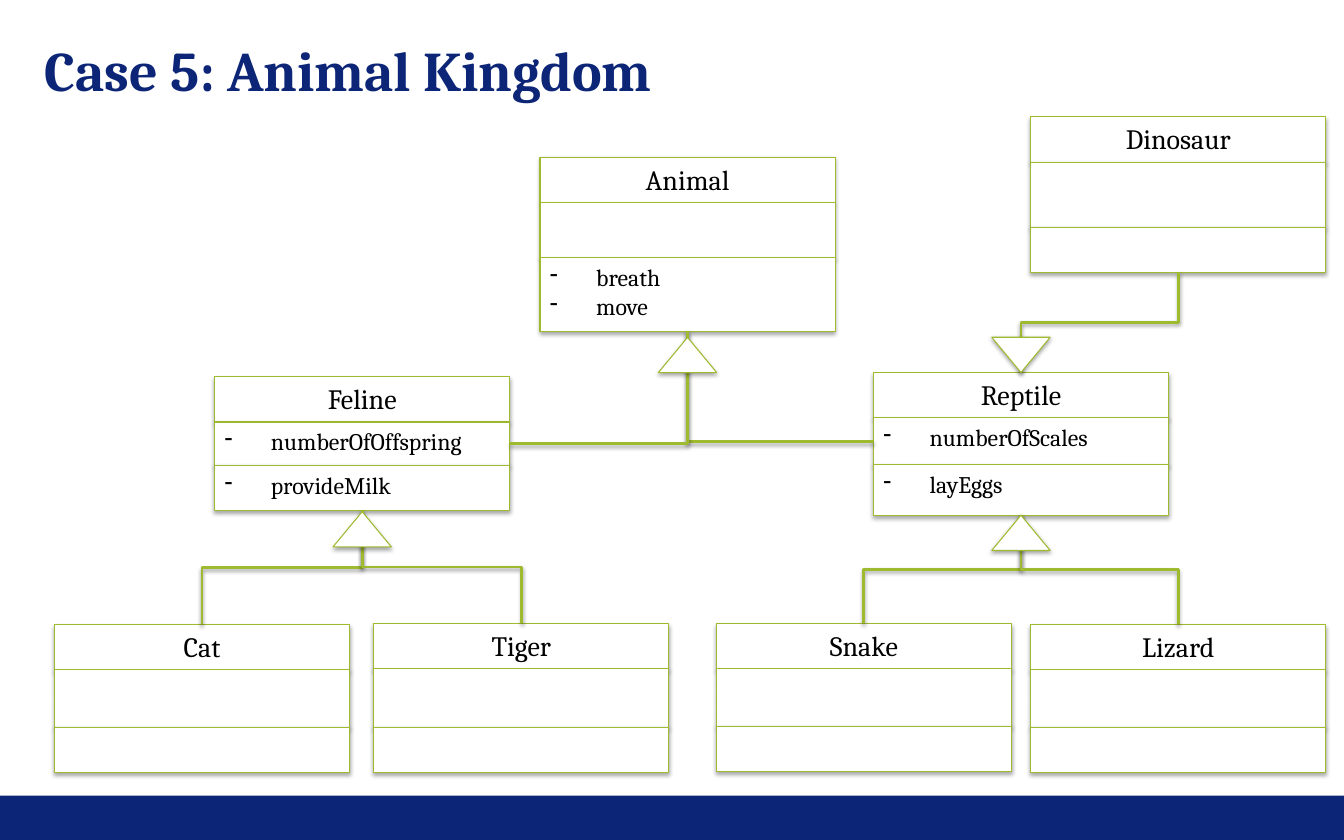
from dataclasses import dataclass

from lxml import etree
from pptx import Presentation
from pptx.dml.color import RGBColor
from pptx.enum.shapes import MSO_CONNECTOR, MSO_SHAPE
from pptx.enum.text import MSO_ANCHOR, PP_ALIGN
from pptx.oxml.ns import qn
from pptx.util import Inches, Pt

ELBOW = MSO_CONNECTOR.ELBOW
RECTANGLE, TRIANGLE = MSO_SHAPE.RECTANGLE, MSO_SHAPE.ISOSCELES_TRIANGLE
TOP, MIDDLE = MSO_ANCHOR.TOP, MSO_ANCHOR.MIDDLE
LEFT, CENTER = PP_ALIGN.LEFT, PP_ALIGN.CENTER
TOP_SITE, LEFT_SITE, BOTTOM_SITE, RIGHT_SITE = range(4)

SLIDE_WIDTH, SLIDE_HEIGHT = Inches(13.34), Inches(8.34)
BLANK_LAYOUT = 6


@dataclass(frozen=True)
class Theme:
    navy: RGBColor = RGBColor(0x0C, 0x25, 0x77)
    green: RGBColor = RGBColor(0x9E, 0xBA, 0x2E)
    white: RGBColor = RGBColor(0xFF, 0xFF, 0xFF)
    black: RGBColor = RGBColor(0, 0, 0)
    font: str = "Cambria"
    title_size: int = 40
    name_size: int = 20
    member_size: int = 17
    box_line: float = 0.75
    link_line: float = 2
    box_shadow: tuple = (1.8, 35)
    link_shadow: tuple = (1.6, 38)


THEME = Theme()

# All places are percentages of the slide's width and height
CLASS_WIDTH, NAME_HEIGHT = 21.96, 5.4
ARROW_WIDTH, ARROW_HEIGHT = 4.35, 4.2

# name: left, top, (attribute height, operation height), attributes, operations
CLASSES = {
    "Cat": (4.05, 74.34, (6.83, 5.4), [], []),
    "Tiger": (27.81, 74.22, (6.95, 5.4), [], []),
    "Snake": (53.3, 74.22, (6.83, 5.4), [], []),
    "Lizard": (76.69, 74.34, (6.83, 5.4), [], []),
    "Feline": (15.97, 44.84, (5.16, 5.4), ["numberOfOffspring"], ["provideMilk"]),
    "Reptile": (64.99, 44.36, (5.58, 6), ["numberOfScales"], ["layEggs"]),
    "Animal": (40.18, 18.71, (6.59, 8.75), [], ["breath", "move"]),
    "Dinosaur": (76.69, 13.91, (7.73, 5.4), [], []),
}
# upper class, lower class, row of the lower class (0 name, 1 attributes), its side
LINKS = [
    ("Animal", "Reptile", 1, LEFT_SITE),
    ("Animal", "Feline", 1, RIGHT_SITE),
    ("Feline", "Cat", 0, TOP_SITE),
    ("Feline", "Tiger", 0, TOP_SITE),
    ("Reptile", "Snake", 0, TOP_SITE),
    ("Reptile", "Lizard", 0, TOP_SITE),
    ("Dinosaur", "Reptile", 0, TOP_SITE),
]
# parent class, gap below it
UPWARD_ARROWS = [("Animal", 0.72), ("Feline", 0.12), ("Reptile", 0)]


def across(share):
    return round(SLIDE_WIDTH * share / 100)


def down(share):
    return round(SLIDE_HEIGHT * share / 100)


def add_shadow(shape, distance, opacity):
    effects = etree.SubElement(shape._element.spPr, qn("a:effectLst"))
    shadow = etree.SubElement(
        effects, qn("a:outerShdw"), blurRad=str(Pt(3.1)),
        dist=str(Pt(distance)), dir="5400000", rotWithShape="0")
    color = etree.SubElement(shadow, qn("a:srgbClr"), val="000000")
    etree.SubElement(color, qn("a:alpha"), val=str(opacity * 1000))


def format_runs(paragraph, size, color, bold=False):
    for run in paragraph.runs:
        run.font.name = THEME.font
        run.font.size = Pt(size)
        run.font.bold = bold
        run.font.color.rgb = color


def add_outlined(shapes, kind, left, top, width, height):
    shape = shapes.add_shape(kind, left, top, width, height)
    shape.fill.solid()
    shape.fill.fore_color.rgb = THEME.white
    shape.line.color.rgb = THEME.green
    shape.line.width = Pt(THEME.box_line)
    add_shadow(shape, *THEME.box_shadow)
    return shape


def add_dash_bullet(paragraph):
    properties = paragraph._p.get_or_add_pPr()
    indent = Inches(0.46)
    properties.set("marL", str(indent))
    properties.set("indent", str(-indent))
    etree.SubElement(properties, qn("a:buChar"), char="-")


def add_class(slide, name, left, top, member_heights, attributes, operations):
    """Three stacked rows in one group: name, attributes, operations."""
    group = slide.shapes.add_group_shape()
    rows = []
    row_top = top
    heights = (NAME_HEIGHT, *member_heights)
    for index, (height, lines) in enumerate(zip(heights, ([name], attributes, operations))):
        row = add_outlined(group.shapes, RECTANGLE, across(left), down(row_top),
                           across(CLASS_WIDTH), down(height))
        row_top += height
        rows.append(row)
        if not lines:
            continue
        frame = row.text_frame
        frame.word_wrap = True
        frame.vertical_anchor = TOP
        frame.text = "\n".join(lines)
        for paragraph in frame.paragraphs:
            paragraph.alignment = LEFT if index else CENTER
            if index:
                add_dash_bullet(paragraph)
            format_runs(paragraph, THEME.member_size if index else THEME.name_size, THEME.black)
    return rows


def add_link(slide, upper, lower, side):
    """Elbow that leaves the upper row downwards and ends at a side of the lower row."""
    connector = slide.shapes.add_connector(ELBOW, 0, 0, 0, 0)
    connector.begin_connect(upper, BOTTOM_SITE)
    connector.end_connect(lower, side)
    begin_x, begin_y = connector.begin_x, connector.begin_y
    end_x, end_y = connector.end_x, connector.end_y
    # A quarter turn makes the first leg vertical
    connector.width, connector.height = end_y - begin_y, abs(end_x - begin_x)
    connector.left = (begin_x + end_x - connector.width) // 2
    connector.top = (begin_y + end_y - connector.height) // 2
    rightward = end_x > begin_x
    properties = connector._element.spPr
    transform = properties.find(qn("a:xfrm"))
    transform.set("rot", str((270 if rightward else 90) * 60000))
    transform.set("flipH", "1" if rightward else "0")
    transform.set("flipV", "0")
    if side != TOP_SITE:
        properties.find(qn("a:prstGeom")).set("prst", "bentConnector2")
    connector.line.color.rgb = THEME.green
    connector.line.width = Pt(THEME.link_line)
    add_shadow(connector, *THEME.link_shadow)


def add_arrow(slide, row, top, pointing_down=False):
    """Inheritance triangle centred on a class row."""
    width = across(ARROW_WIDTH)
    arrow = add_outlined(slide.shapes, TRIANGLE, row.left + (row.width - width) // 2,
                         top, width, down(ARROW_HEIGHT))
    if pointing_down:
        arrow._element.spPr.find(qn("a:xfrm")).set("flipV", "1")


def add_footer_band(slide, top):
    band = slide.shapes.add_shape(RECTANGLE, 0, down(top), SLIDE_WIDTH, down(100 - top))
    band.shadow.inherit = False
    band.fill.solid()
    band.fill.fore_color.rgb = THEME.navy
    band.line.fill.background()


def add_title(slide, text, left, top, width, height):
    box = slide.shapes.add_textbox(across(left), down(top), across(width), down(height))
    frame = box.text_frame
    frame.word_wrap = True
    frame.vertical_anchor = MIDDLE
    frame.margin_left = frame.margin_right = frame.margin_top = frame.margin_bottom = 0
    frame.text = text
    format_runs(frame.paragraphs[0], THEME.title_size, THEME.navy, bold=True)


def add_class_diagram(slide):
    rows = {name: add_class(slide, name, *details) for name, details in CLASSES.items()}
    for upper, lower, row, side in LINKS:
        add_link(slide, rows[upper][-1], rows[lower][row], side)
    for name, gap in UPWARD_ARROWS:
        last = rows[name][-1]
        add_arrow(slide, last, last.top + last.height + down(gap))
    reptile = rows["Reptile"][0]
    add_arrow(slide, reptile, reptile.top - down(ARROW_HEIGHT), pointing_down=True)


def main():
    presentation = Presentation()
    presentation.slide_width, presentation.slide_height = SLIDE_WIDTH, SLIDE_HEIGHT
    slide = presentation.slides.add_slide(presentation.slide_layouts[BLANK_LAYOUT])
    add_footer_band(slide, 94.72)
    add_title(slide, "Case 5: Animal Kingdom", 3.3, 5.28, 93.4, 5.88)
    add_class_diagram(slide)
    presentation.save("out.pptx")


if __name__ == "__main__":
    main()
